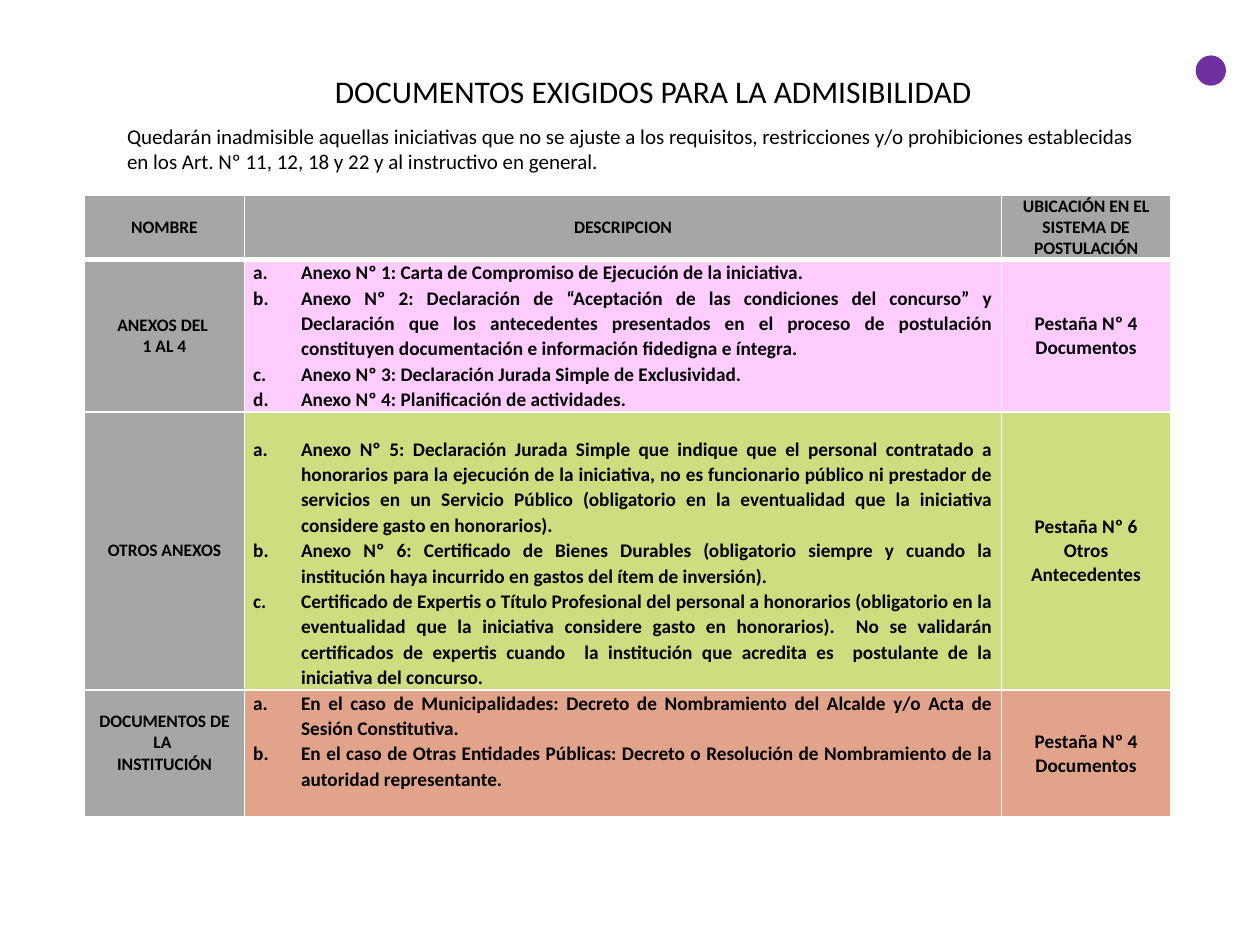
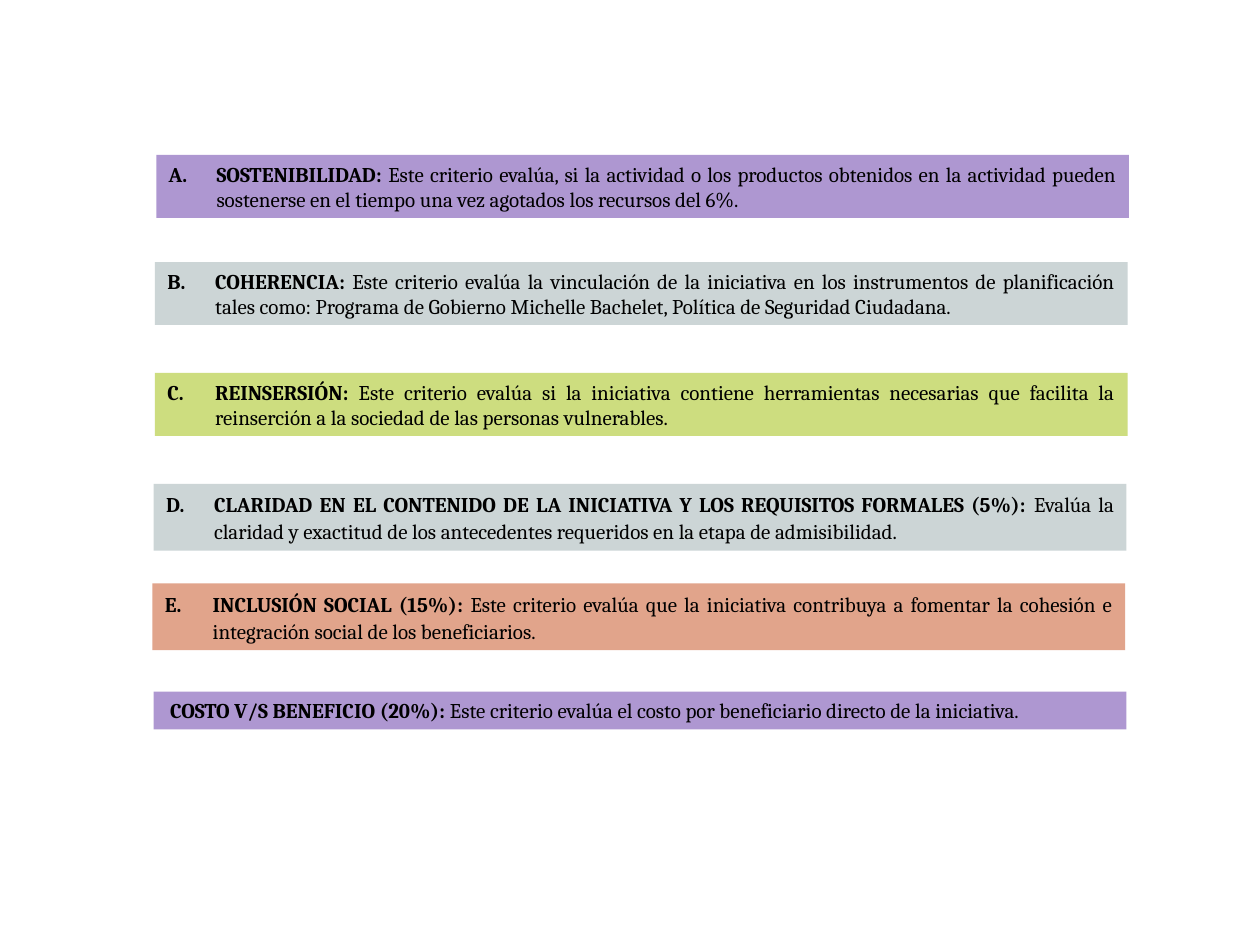
from lxml import etree
from pptx import Presentation
from pptx.dml.color import RGBColor
from pptx.enum.shapes import MSO_SHAPE
from pptx.enum.text import MSO_ANCHOR, PP_ALIGN
from pptx.oxml.ns import qn
from pptx.util import Inches, Pt

LEFT, CENTER, JUSTIFY = PP_ALIGN.LEFT, PP_ALIGN.CENTER, PP_ALIGN.JUSTIFY
TOP, MIDDLE = MSO_ANCHOR.TOP, MSO_ANCHOR.MIDDLE
RECTANGLE, OVAL = MSO_SHAPE.RECTANGLE, MSO_SHAPE.OVAL

COLORS = {
    "text": "000000", "white": "FFFFFF", "gray": "A6A6A6", "pink": "FFCCFF",
    "green": "CDDD7F", "salmon": "E1A48B", "lilac": "AE97D1",
    "mist": "CCD5D6", "purple": "7030A0",
}
SANS, SERIF = "Calibri", "Cambria"
LIST_INDENT = 0.38
TABLE_BOX = (0.67, 1.55)
COLUMN_WIDTHS = (1.27, 6.01, 1.34)
HEADER_HEIGHT = 0.51
HEADERS = ("NOMBRE", "DESCRIPCION", "UBICACIÓN EN EL SISTEMA DE POSTULACIÓN")

DOCUMENT_ROWS = [
    {
        "height": 1.2, "color": "pink",
        "name": ["ANEXOS DEL ", "1 AL 4"],
        "items": [
            "Anexo Nº 1: Carta de Compromiso de Ejecución de la iniciativa. ",
            "Anexo Nº 2: Declaración de “Aceptación de las condiciones del concurso” y "
            "Declaración que los antecedentes presentados en el proceso de postulación "
            "constituyen documentación e información fidedigna e íntegra.",
            "Anexo Nº 3: Declaración Jurada Simple de Exclusividad. ",
            "Anexo Nº 4: Planificación de actividades.",
        ],
        "place": ["Pestaña Nº 4 Documentos"],
    },
    {
        "height": 2.2, "color": "green", "items_top": 0.19,
        "name": ["OTROS ANEXOS"],
        "items": [
            "Anexo Nº 5: Declaración Jurada Simple que indique que el personal contratado a "
            "honorarios para la ejecución de la iniciativa, no es funcionario público ni "
            "prestador de servicios en un Servicio Público (obligatorio en la eventualidad "
            "que la iniciativa considere gasto en honorarios).",
            "Anexo Nº 6: Certificado de Bienes Durables (obligatorio siempre y cuando la "
            "institución haya incurrido en gastos del ítem de inversión). ",
            "Certificado de Expertis o Título Profesional del personal a honorarios "
            "(obligatorio en la eventualidad que la iniciativa considere gasto en "
            "honorarios).  No se validarán certificados de expertis cuando  la institución "
            "que acredita es  postulante de la iniciativa del concurso.",
        ],
        "place": ["Pestaña Nº 6", "Otros Antecedentes"],
    },
    {
        "height": 1.01, "color": "salmon", "name_bottom": 0.17,
        "name": ["DOCUMENTOS DE LA ", "INSTITUCIÓN"],
        "items": [
            "En el caso de Municipalidades: Decreto de Nombramiento del Alcalde y/o Acta de "
            "Sesión Constitutiva. ",
            "En el caso de Otras Entidades Públicas: Decreto o Resolución de Nombramiento "
            "de la autoridad representante. ",
        ],
        "place": ["Pestaña Nº 4 Documentos"],
    },
]

CRITERIA = [
    ((1.24, 1.23, 7.72, 0.5), "lilac", 1, "SOSTENIBILIDAD: ",
     "Este criterio evalúa, si la actividad o los productos obtenidos en la actividad "
     "pueden sostenerse en el tiempo una vez agotados los recursos del 6%."),
    ((1.23, 2.08, 7.72, 0.5), "mist", 1, "COHERENCIA: ",
     "Este criterio evalúa la vinculación de la iniciativa en los instrumentos de "
     "planificación tales como: Programa de Gobierno Michelle Bachelet, Política de "
     "Seguridad Ciudadana."),
    ((1.23, 2.96, 7.72, 0.5), "green", 1, "REINSERSIÓN: ",
     "Este criterio evalúa si la iniciativa contiene herramientas necesarias que facilita "
     "la reinserción a la sociedad de las personas vulnerables."),
    ((1.22, 3.84, 7.72, 0.53), "mist", 1.07,
     "CLARIDAD EN EL CONTENIDO DE LA INICIATIVA Y LOS REQUISITOS FORMALES (5%): ",
     "Evalúa la claridad y exactitud de los antecedentes requeridos en la etapa de "
     "admisibilidad."),
    ((1.21, 4.63, 7.72, 0.53), "salmon", 1.07, "INCLUSIÓN SOCIAL (15%): ",
     "Este criterio evalúa que la iniciativa contribuya a fomentar la cohesión e "
     "integración social de los beneficiarios."),
]


def rgb(name):
    return RGBColor.from_string(COLORS[name])


def number(para, scheme, start):
    props = para._p.get_or_add_pPr()
    props.set("marL", str(Inches(LIST_INDENT)))
    props.set("indent", str(-Inches(LIST_INDENT)))
    bullet = etree.SubElement(props, qn("a:buAutoNum"), type=scheme)
    if start > 1:
        bullet.set("startAt", str(start))


def write(frame, paragraphs, font=SANS, size=12, bold=False, align=LEFT,
          spacing=None, scheme=None, start=1):
    for index, content in enumerate(paragraphs):
        para = frame.paragraphs[0] if index == 0 else frame.add_paragraph()
        para.alignment = align
        if spacing:
            para.line_spacing = spacing
        if scheme:
            number(para, scheme, start)
        spans = [(content, bold)] if isinstance(content, str) else content
        for text, heavy in spans:
            span = para.add_run()
            span.text = text
            span.font.name = font
            span.font.size = Pt(size)
            span.font.bold = heavy
            span.font.color.rgb = rgb("text")


def add_text(page, box, text, wrap=True, **style):
    frame = page.shapes.add_textbox(*map(Inches, box)).text_frame
    frame.word_wrap = wrap
    write(frame, [text], **style)


def add_filled(page, kind, box, color):
    shape = page.shapes.add_shape(kind, *map(Inches, box))
    shape.shadow.inherit = False
    shape.fill.solid()
    shape.fill.fore_color.rgb = rgb(color)
    shape.line.fill.background()
    return shape


def add_borders(cell, bottom):
    props = cell._tc.get_or_add_tcPr()
    widths = {"lnL": 1, "lnR": 1, "lnT": 1, "lnB": bottom}
    for position, (tag, width) in enumerate(widths.items()):
        line = etree.Element(qn(f"a:{tag}"), w=str(Pt(width)))
        fill = etree.SubElement(line, qn("a:solidFill"))
        etree.SubElement(fill, qn("a:srgbClr"), val=COLORS["white"])
        props.insert(position, line)


def fill_cell(cell, paragraphs, color, anchor=MIDDLE, top=0, bottom=0,
              border=1, size=10, align=CENTER, **style):
    cell.margin_left = cell.margin_right = Inches(0.07)
    cell.margin_top, cell.margin_bottom = Inches(top), Inches(bottom)
    cell.vertical_anchor = anchor
    cell.fill.solid()
    cell.fill.fore_color.rgb = rgb(color)
    add_borders(cell, border)
    write(cell.text_frame, paragraphs, size=size, bold=True, align=align, **style)


def add_document_table(page, left, top):
    heights = [HEADER_HEIGHT] + [row["height"] for row in DOCUMENT_ROWS]
    box = (left, top, sum(COLUMN_WIDTHS), sum(heights))
    table = page.shapes.add_table(len(heights), len(COLUMN_WIDTHS),
                                  *map(Inches, box)).table
    table.horz_banding = False
    for column, width in zip(table.columns, COLUMN_WIDTHS):
        column.width = Inches(width)
    for row, height in zip(table.rows, heights):
        row.height = Inches(height)
    for column, header in enumerate(HEADERS):
        fill_cell(table.cell(0, column), [header], "gray", border=3)
    for index, row in enumerate(DOCUMENT_ROWS, start=1):
        name, items, place = (table.cell(index, column) for column in range(3))
        fill_cell(name, row["name"], "gray", bottom=row.get("name_bottom", 0))
        fill_cell(items, row["items"], row["color"], anchor=TOP,
                  top=row.get("items_top", 0), size=11, align=JUSTIFY,
                  spacing=1.07, scheme="alphaLcPeriod")
        fill_cell(place, row["place"], row["color"], size=11)


def add_criterion(page, box, color, spans, inset=0.1, **style):
    frame = add_filled(page, RECTANGLE, box, color).text_frame
    frame.word_wrap = True
    frame.vertical_anchor = TOP
    frame.margin_left = Inches(inset)
    write(frame, [spans], font=SERIF, align=JUSTIFY, **style)


def build_documents(page):
    add_document_table(page, *TABLE_BOX)
    add_text(page, (2.56, 0.52, 5.36, 0.4),
             "DOCUMENTOS EXIGIDOS PARA LA ADMISIBILIDAD", wrap=False, size=18)
    add_text(page, (0.91, 0.93, 8.19, 0.5),
             "Quedarán inadmisible aquellas iniciativas que no se ajuste a los requisitos, "
             "restricciones y/o prohibiciones establecidas en los Art. Nº 11, 12, 18 y 22 "
             "y al instructivo en general.", align=JUSTIFY)
    add_filled(page, OVAL, (9.49, 0.44, 0.24, 0.24), "purple")


def build_criteria(page):
    for start, (box, color, spacing, name, detail) in enumerate(CRITERIA, start=1):
        add_criterion(page, box, color, [(name, True), (detail, False)],
                      spacing=spacing, scheme="alphaUcPeriod", start=start)
    add_criterion(page, (1.22, 5.49, 7.72, 0.3), "lilac",
                  [("COSTO V/S BENEFICIO (20%):", True),
                   (" Este criterio evalúa el costo por beneficiario directo de la "
                    "iniciativa.", False)], inset=0.13)


def main():
    deck = Presentation()
    deck.slide_width, deck.slide_height = Inches(10), Inches(7.5)
    for build in (build_documents, build_criteria):
        build(deck.slides.add_slide(deck.slide_layouts[6]))
    deck.save("out.pptx")


if __name__ == "__main__":
    main()
